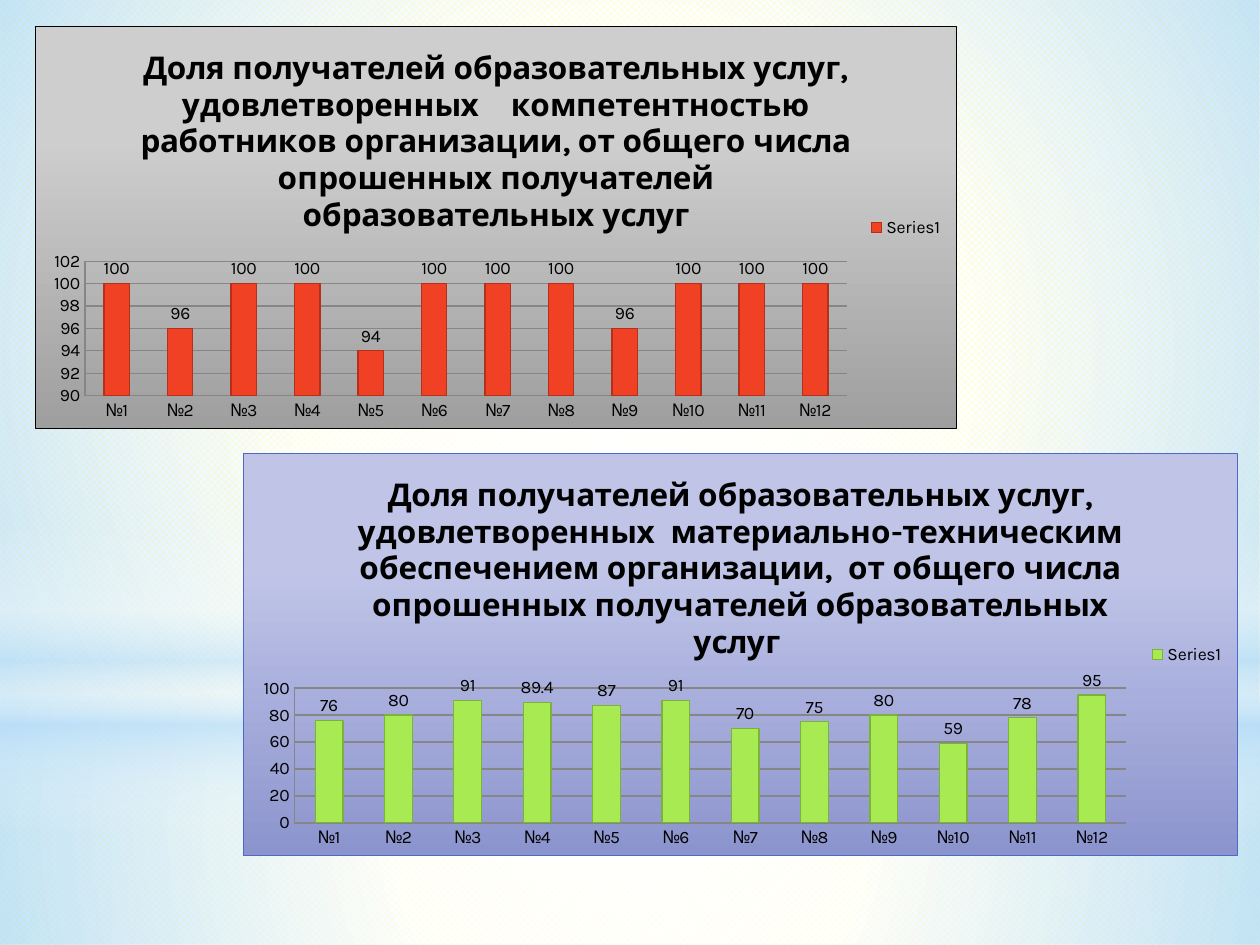
import pptx
import pptx.chart.data
import pptx.dml.color
import pptx.enum.chart
import pptx.enum.dml
import pptx.enum.shapes
import pptx.oxml
import pptx.util

EMU_PER_PX = 914400 / 126
DRAWING_NS = "http://schemas.openxmlformats.org/drawingml/2006/main"
CHART_NS = "http://schemas.openxmlformats.org/drawingml/2006/chart"
FONT = "Karla"

RGB = pptx.dml.color.RGBColor
BLACK = RGB(0x00, 0x00, 0x00)
WHITE = RGB(0xFF, 0xFF, 0xFF)
YELLOW = RGB(0xFF, 0xFF, 0x00)
SKY = RGB(0xB4, 0xDC, 0xFA)
GRID_GRAY = RGB(0x86, 0x86, 0x86)
LIGHT_GRAY = RGB(0xCE, 0xCE, 0xCE)
DARK_GRAY = RGB(0x9F, 0x9F, 0x9F)
LIGHT_BLUE = RGB(0xC0, 0xC5, 0xE8)
DARK_BLUE = RGB(0x8C, 0x94, 0xCE)
BLUE = RGB(0x4E, 0x67, 0xC8)
RED = RGB(0xF1, 0x41, 0x24)
DARK_RED = RGB(0xB5, 0x30, 0x1A)
GREEN = RGB(0xA7, 0xEA, 0x52)
DARK_GREEN = RGB(0x7D, 0xB0, 0x3D)

RECTANGLE = pptx.enum.shapes.MSO_SHAPE.RECTANGLE
OVAL = pptx.enum.shapes.MSO_SHAPE.OVAL
SCHOOLS = [f"№{number}" for number in range(1, 13)]

# Shape, box in px, stops (position %, colour, opacity %), radial or not
BACKDROP = [
    (RECTANGLE, (0, 703, 1260, 242),
     [(0, WHITE, 91), (37, WHITE, 76), (100, SKY, 79)], True),
    (RECTANGLE, (0, 0, 1260, 703),
     [(0, WHITE, 89), (48, WHITE, 62), (100, SKY, 79)], True),
    (RECTANGLE, (0, 519, 1260, 315),
     [(0, WHITE, 0), (29, WHITE, 30), (45, SKY, 40),
      (55, WHITE, 26), (65, SKY, 60), (100, WHITE, 0)], False),
    (OVAL, (0, 221, 1260, 703), [(0, WHITE, 100), (56, WHITE, 0)], True),
]


def px(length):
    return pptx.util.Emu(round(length * EMU_PER_PX))


def gradient_xml(stops, radial=False):
    stop_xml = "".join(
        f'<a:gs pos="{position * 1000}"><a:srgbClr val="{color}">'
        f'<a:alpha val="{opacity * 1000}"/></a:srgbClr></a:gs>'
        for position, color, opacity in stops)
    if radial:
        direction = ('<a:path path="circle"><a:fillToRect l="50000" t="50000" '
                     'r="50000" b="50000"/></a:path>')
    else:
        direction = '<a:lin ang="5400000" scaled="0"/>'
    return (f'<a:gradFill xmlns:a="{DRAWING_NS}" rotWithShape="1">'
            f'<a:gsLst>{stop_xml}</a:gsLst>{direction}</a:gradFill>')


def fill_background(page):
    fill = page.background.fill
    fill.patterned()
    fill.pattern = pptx.enum.dml.MSO_PATTERN.SOLID_DIAMOND
    fill.fore_color.rgb = YELLOW
    fill.back_color.rgb = WHITE


def add_glow(page, kind, box, stops, radial):
    """Add a borderless shape with a translucent gradient."""
    shape = page.shapes.add_shape(kind, *map(px, box))
    shape.shadow.inherit = False
    shape.line.fill.background()
    gradient = pptx.oxml.parse_xml(gradient_xml(stops, radial))
    shape._element.spPr.find(f"{{{DRAWING_NS}}}prstGeom").addnext(gradient)


def style_chart_area(chart, top, bottom, border):
    """Give the whole chart a vertical gradient and a thin border."""
    gradient = gradient_xml([(28, top, 100), (100, bottom, 100)])
    area = pptx.oxml.parse_xml(
        f'<c:spPr xmlns:c="{CHART_NS}" xmlns:a="{DRAWING_NS}">{gradient}'
        f'<a:ln w="9525"><a:solidFill><a:srgbClr val="{border}"/></a:solidFill>'
        '</a:ln></c:spPr>')
    chart._chartSpace.find(f"{{{CHART_NS}}}txPr").addprevious(area)


def style_font(font, size, bold=False):
    font.name = FONT
    font.size = pptx.util.Pt(size)
    font.bold = bold
    font.color.rgb = BLACK


def style_line(line, color, width=0.75):
    line.color.rgb = color
    line.width = pptx.util.Pt(width)


def style_axes(chart, scale, grid_width):
    value_axis = chart.value_axis
    value_axis.minimum_scale, value_axis.maximum_scale, value_axis.major_unit = scale
    value_axis.has_major_gridlines = True
    style_line(value_axis.major_gridlines.format.line, GRID_GRAY, grid_width)
    for axis in (chart.category_axis, value_axis):
        axis.major_tick_mark = pptx.enum.chart.XL_TICK_MARK.NONE
        style_line(axis.format.line, GRID_GRAY)


def add_column_chart(page, box, title, values, scale, grid_width, bar, bar_edge, area):
    data = pptx.chart.data.CategoryChartData()
    data.categories = SCHOOLS
    data.add_series("Series1", values)
    chart = page.shapes.add_chart(
        pptx.enum.chart.XL_CHART_TYPE.COLUMN_CLUSTERED, *map(px, box), data).chart
    style_font(chart.font, 10)
    style_chart_area(chart, *area)

    chart.has_title = True
    paragraph = chart.chart_title.text_frame.paragraphs[0]
    paragraph.text = title
    style_font(paragraph.runs[0].font, 18, bold=True)

    chart.has_legend = True
    chart.legend.position = pptx.enum.chart.XL_LEGEND_POSITION.RIGHT
    chart.legend.include_in_layout = False
    style_axes(chart, scale, grid_width)

    plot = chart.plots[0]
    plot.gap_width = 150
    plot.vary_by_categories = False
    series = plot.series[0]
    series.format.fill.solid()
    series.format.fill.fore_color.rgb = bar
    style_line(series.format.line, bar_edge)
    labels = series.data_labels
    labels.show_value = True
    labels.position = pptx.enum.chart.XL_LABEL_POSITION.OUTSIDE_END
    style_font(labels.font, 10)


def main():
    deck = pptx.Presentation()
    deck.slide_width, deck.slide_height = px(1260), px(945)
    page = deck.slides.add_slide(deck.slide_layouts[6])
    fill_background(page)
    for kind, box, stops, radial in BACKDROP:
        add_glow(page, kind, box, stops, radial)

    add_column_chart(
        page, (35, 26, 922, 403),
        "Доля получателей образовательных услуг, удовлетворенных    компетентностью "
        "работников организации, от общего числа опрошенных получателей "
        "образовательных услуг",
        [100, 96, 100, 100, 94, 100, 100, 100, 96, 100, 100, 100],
        scale=(90, 102, 2), grid_width=0.75, bar=RED, bar_edge=DARK_RED,
        area=(LIGHT_GRAY, DARK_GRAY, BLACK))
    add_column_chart(
        page, (243, 453, 995, 403),
        "Доля получателей образовательных услуг, удовлетворенных  "
        "материально-техническим обеспечением организации,  от общего числа "
        "опрошенных получателей образовательных услуг ",
        [76, 80, 91, 89.4, 87, 91, 70, 75, 80, 59, 78, 95],
        scale=(0, 100, 20), grid_width=1, bar=GREEN, bar_edge=DARK_GREEN,
        area=(LIGHT_BLUE, DARK_BLUE, BLUE))
    deck.save("out.pptx")


if __name__ == "__main__":
    main()
